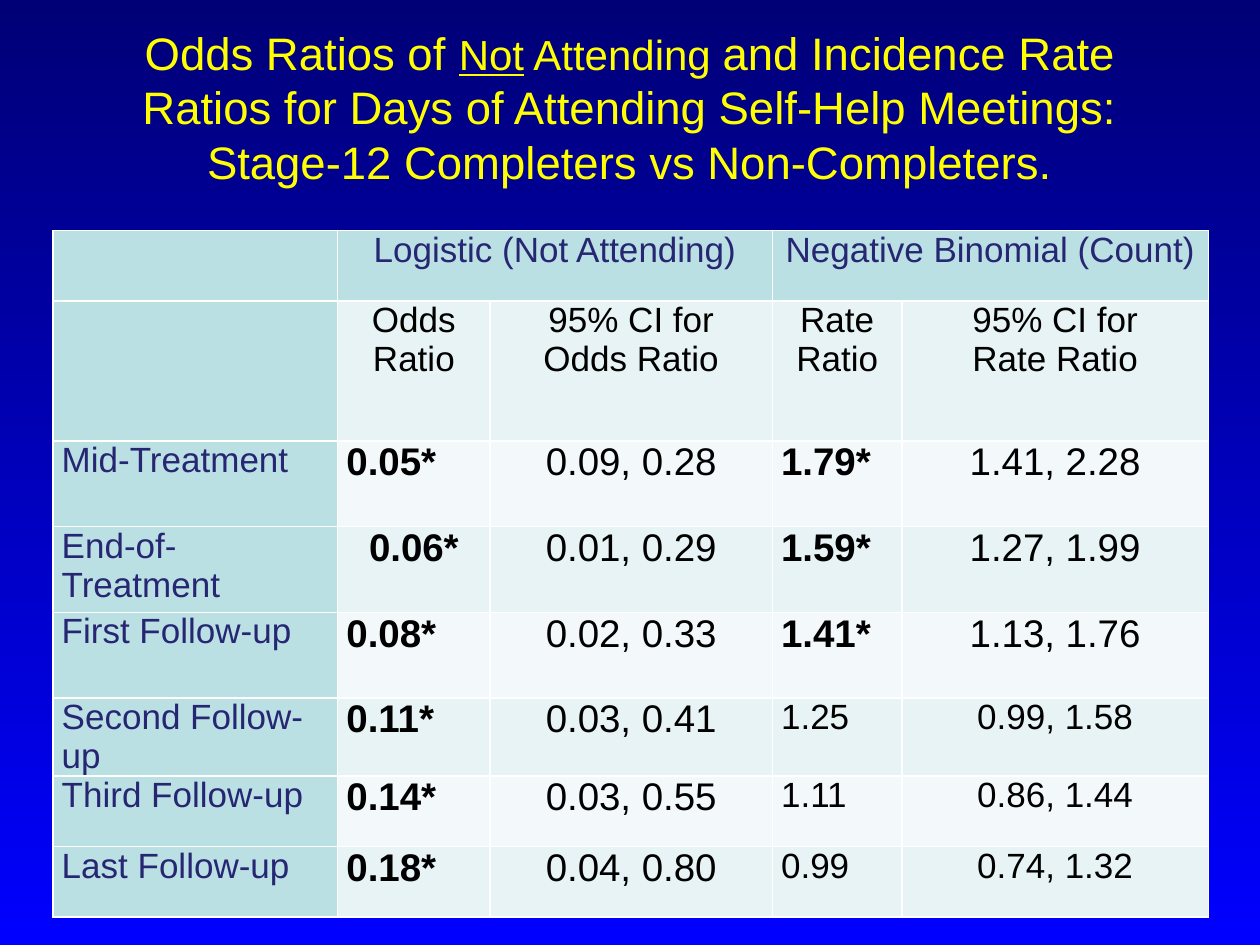
from pptx import Presentation, util as u
from pptx.dml.color import RGBColor
from pptx.enum import text
from pptx.oxml import parse_xml
from pptx.oxml.ns import nsdecls

TITLE = [
    [("Odds Ratios of ", 26, False), ("Not", 24, True), (" Attending ", 24, False),
     ("and Incidence Rate Ratios for Days of Attending Self-Help Meetings:", 26, False)],
    [("Stage-12 Completers vs Non-Completers.", 26, False)],
]
ROWS = [
    ["", "Logistic (Not Attending)", "", "Negative Binomial (Count)", ""],
    ["", "Odds Ratio", "95% CI for\nOdds Ratio", "Rate Ratio", "95% CI for\nRate Ratio"],
    ["Mid-Treatment", "0.05*", "0.09, 0.28", "1.79*", "1.41, 2.28"],
    ["End-of-Treatment", "0.06*", "0.01, 0.29", "1.59*", "1.27, 1.99"],
    ["First Follow-up", "0.08*", "0.02, 0.33", "1.41*", "1.13, 1.76"],
    ["Second Follow-up", "0.11*", "0.03, 0.41", "1.25", "0.99, 1.58"],
    ["Third Follow-up", "0.14*", "0.03, 0.55", "1.11", "0.86, 1.44"],
    ["Last Follow-up", "0.18*", "0.04, 0.80", "0.99", "0.74, 1.32"],
]
COL_WIDTHS = [2.26, 1.21, 2.24, 1.03, 2.43]
ROW_HEIGHTS = [0.56, 1.11, 0.68, 0.68, 0.68, 0.62, 0.56, 0.56]
CENTERED_RATIO = "0.06*"
HEAD, BANDS = "BBE0E3", ["F3F9FA", "E7F3F4"]
NAVY, BLACK, YELLOW, WHITE = "262673", "000000", "FFFF00", "FFFFFF"


def rgb(code):
    """Turn a hex string into a colour."""
    return RGBColor.from_string(code)


def set_background(s):
    """Fill the slide with a vertical blue gradient."""
    fill = s.background.fill
    fill.gradient()
    fill.gradient_angle = 270
    for stop, code in zip(fill.gradient_stops, ["000076", "0000FF"]):
        stop.color.rgb = rgb(code)


def add_title(s):
    """Place the title and write its lines."""
    sp = s.shapes.title
    sp.left, sp.top, sp.width, sp.height = map(u.Inches, (0.5, 0.42, 9, 1.25))
    tf = sp.text_frame
    tf.word_wrap = True
    tf.auto_size = text.MSO_AUTO_SIZE.NONE
    tf.vertical_anchor = text.MSO_ANCHOR.MIDDLE
    tf.margin_bottom = u.Inches(0.45)
    p = tf.paragraphs[0]
    p.alignment = text.PP_ALIGN.CENTER
    for i, line in enumerate(TITLE):
        if i:
            p.add_line_break()
        for words, size, underline in line:
            r = p.add_run()
            r.text = words
            r.font.name, r.font.size = "Arial", u.Pt(size)
            r.font.underline = underline
            r.font.color.rgb = rgb(YELLOW)


def add_borders(cell):
    """Draw a thin white line on each side of a cell."""
    tc_pr = cell._tc.get_or_add_tcPr()
    for side in "LRTB":
        tc_pr.append(parse_xml(
            f'<a:ln{side} {nsdecls("a")} w="12700"><a:solidFill>'
            f'<a:srgbClr val="{WHITE}"/></a:solidFill></a:ln{side}>'))


def format_cell(cell, row, col, words):
    """Fill one cell and set its text by its role in the table."""
    is_head = row == 0 or col == 0
    is_ratio = row > 1 and col in (1, 3)
    significant = words.endswith("*")
    is_left = col == 0 or (is_ratio and words != CENTERED_RATIO)
    is_large = row > 1 and (significant or col == 2 or (col == 4 and ROWS[row][3].endswith("*")))
    add_borders(cell)
    cell.fill.solid()
    cell.fill.fore_color.rgb = rgb(HEAD if is_head else BANDS[row % 2])
    cell.margin_left = cell.margin_right = u.Inches(0.07)
    cell.margin_top = cell.margin_bottom = 0
    cell.text_frame.text = words
    for p in cell.text_frame.paragraphs:
        p.alignment = text.PP_ALIGN.LEFT if is_left else text.PP_ALIGN.CENTER
        p.font.name, p.font.size = "Arial", u.Pt(22 if is_large else 20)
        p.font.bold = significant
        p.font.color.rgb = rgb(NAVY if is_head else BLACK)


def add_results(s):
    """Build the table of ratios and confidence intervals."""
    frame = s.shapes.add_table(len(ROWS), len(COL_WIDTHS), u.Inches(0.42), u.Inches(1.83),
                               u.Inches(sum(COL_WIDTHS)), u.Inches(sum(ROW_HEIGHTS)))
    table = frame.table
    for column, width in zip(table.columns, COL_WIDTHS):
        column.width = u.Inches(width)
    for line, height in zip(table.rows, ROW_HEIGHTS):
        line.height = u.Inches(height)
    for row, values in enumerate(ROWS):
        for col, words in enumerate(values):
            format_cell(table.cell(row, col), row, col, words)
    for col in (1, 3):
        table.cell(0, col).merge(table.cell(0, col + 1))


def main():
    """Build and save the slide."""
    prs = Presentation()
    prs.slide_width, prs.slide_height = u.Inches(10), u.Inches(7.5)
    s = prs.slides.add_slide(prs.slide_layouts[5])
    set_background(s)
    add_title(s)
    add_results(s)
    prs.save("out.pptx")


if __name__ == "__main__":
    main()
